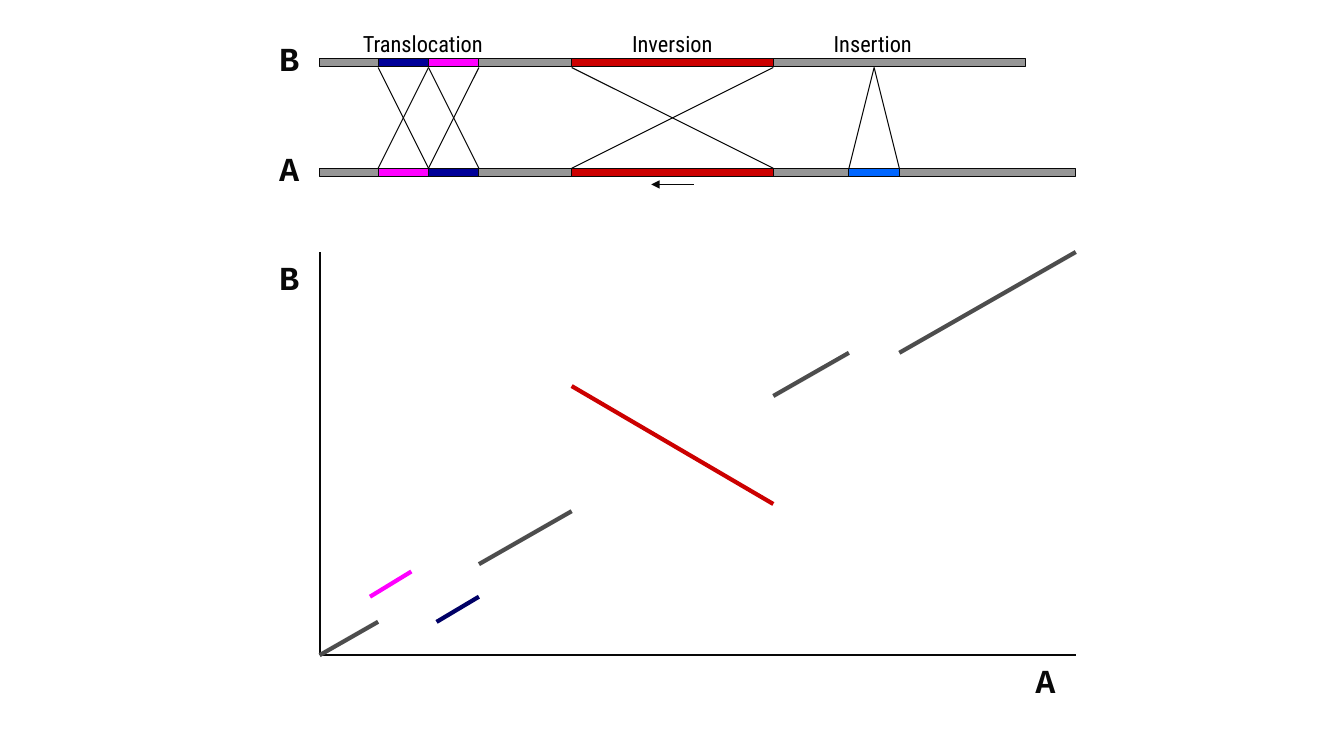
from dataclasses import dataclass

from lxml import etree
from pptx import Presentation
from pptx.dml.color import RGBColor
from pptx.enum import shapes, text
from pptx.oxml import ns
from pptx.util import Inches, Pt

INK, GREY, DARK_GREY = "080808", "969696", "4D4D4D"
NAVY, MAGENTA, RED, BLUE = "000099", "FF00FF", "CC0000", "0066FF"
LEFT, RIGHT = 3.17, 10.67
PLOT_TOP, PLOT_BOTTOM = 2.5, 6.5
B_TOP, A_TOP, BAR_HEIGHT = 0.58, 1.67, 0.08
B_EDGE = 0.67  # lower edge of sequence B, where the links start


@dataclass(frozen=True)
class Bar:
    left: float
    top: float
    width: float
    color: str


@dataclass(frozen=True)
class Line:
    x1: float
    y1: float
    x2: float
    y2: float
    color: str = INK
    width: float = 0.75
    arrow: bool = False


@dataclass(frozen=True)
class Label:
    words: str
    left: float
    top: float
    width: float


def rgb(color: str) -> RGBColor:
    return RGBColor.from_string(color)


def draw_bar(slide, bar: Bar) -> None:
    shape = slide.shapes.add_shape(
        shapes.MSO_SHAPE.RECTANGLE, Inches(bar.left), Inches(bar.top),
        Inches(bar.width), Inches(BAR_HEIGHT))
    shape.shadow.inherit = False
    shape.fill.solid()
    shape.fill.fore_color.rgb = rgb(bar.color)
    shape.line.color.rgb = rgb(INK)
    shape.line.width = Pt(0.75)


def draw_line(slide, line: Line) -> None:
    connector = slide.shapes.add_connector(
        shapes.MSO_CONNECTOR.STRAIGHT, Inches(line.x1), Inches(line.y1),
        Inches(line.x2), Inches(line.y2))
    connector.line.color.rgb = rgb(line.color)
    connector.line.width = Pt(line.width)
    if line.arrow:
        outline = connector.line._get_or_add_ln()
        etree.SubElement(outline, ns.qn("a:tailEnd"), type="triangle")
    etree.SubElement(connector._element.spPr, ns.qn("a:effectLst"))


def draw_label(slide, label: Label, *, height: float, font: str, size: int,
               color: str, bold: bool = False) -> None:
    shape = slide.shapes.add_textbox(
        Inches(label.left), Inches(label.top), Inches(label.width), Inches(height))
    frame = shape.text_frame
    frame.word_wrap = True
    frame.auto_size = text.MSO_AUTO_SIZE.SHAPE_TO_FIT_TEXT
    paragraph = frame.paragraphs[0]
    run = paragraph.add_run()
    run.text = label.words
    run.font.name = font
    run.font.size = Pt(size)
    run.font.bold = bold
    run.font.color.rgb = rgb(color)


def diagonal(x: float) -> float:
    """Height of the matching diagonal before the insertion."""
    return PLOT_BOTTOM - (x - LEFT) * (PLOT_BOTTOM - PLOT_TOP) / 7


BARS = [
    # Sequence B
    Bar(LEFT, B_TOP, 7, GREY),
    Bar(3.75, B_TOP, 0.5, NAVY),
    Bar(4.25, B_TOP, 0.5, MAGENTA),
    Bar(5.67, B_TOP, 2, RED),
    # Sequence A
    Bar(LEFT, A_TOP, RIGHT - LEFT, GREY),
    Bar(3.75, A_TOP, 0.5, MAGENTA),
    Bar(4.25, A_TOP, 0.5, NAVY),
    Bar(5.67, A_TOP, 2, RED),
    Bar(8.42, A_TOP, 0.5, BLUE),
]

# Ends of each link on B and on A: translocation, inversion, insertion
LINKS = [
    (3.75, 4.25), (4.25, 4.75), (4.25, 3.75), (4.75, 4.25),
    (5.67, 7.67), (7.67, 5.67),
    (8.67, 8.42), (8.67, 8.92),
]

UNCHANGED = [(LEFT, 3.75), (4.75, 5.67), (7.67, 8.42)]

LINES = [
    *(Line(on_b, B_EDGE, on_a, A_TOP) for on_b, on_a in LINKS),
    Line(6.88, 1.83, 6.46, 1.83, arrow=True),
    # Axes
    Line(LEFT, PLOT_BOTTOM, RIGHT, PLOT_BOTTOM, width=1.5),
    Line(LEFT, PLOT_BOTTOM, LEFT, PLOT_TOP, width=1.5),
    # Dot plot
    *(Line(start, diagonal(start), end, diagonal(end), DARK_GREY, 3)
      for start, end in UNCHANGED),
    Line(8.92, 3.5, RIGHT, PLOT_TOP, DARK_GREY, 3),
    Line(7.67, 5, 5.67, 3.83, RED, 3),
    Line(3.67, 5.92, 4.08, 5.67, MAGENTA, 3),
    Line(4.33, 6.17, 4.75, 5.92, "000066", 3),
]

SEQUENCE_NAMES = [
    Label("B", 2.67, 0.33, 0.5),
    Label("A", 2.67, 1.42, 0.5),
    Label("B", 2.67, PLOT_TOP, 0.5),
    Label("A", 10.17, PLOT_BOTTOM, 0.5),
]

EVENT_NAMES = [
    Label("Translocation", 3.5, 0.25, 1.5),
    Label("Inversion", 6.17, 0.25, 1.08),
    Label("Insertion", 8.17, 0.25, 1.08),
]


def main() -> None:
    presentation = Presentation()
    presentation.slide_width = Inches(13.33)
    presentation.slide_height = Inches(7.5)
    slide = presentation.slides.add_slide(presentation.slide_layouts[6])

    for bar in BARS:
        draw_bar(slide, bar)
    for line in LINES:
        draw_line(slide, line)
    for label in SEQUENCE_NAMES:
        draw_label(slide, label, height=0.5, font="Courier New", size=24,
                   color=INK, bold=True)
    for label in EVENT_NAMES:
        draw_label(slide, label, height=0.37, font="Roboto Condensed", size=16,
                   color="000000")

    presentation.save("out.pptx")


if __name__ == "__main__":
    main()
